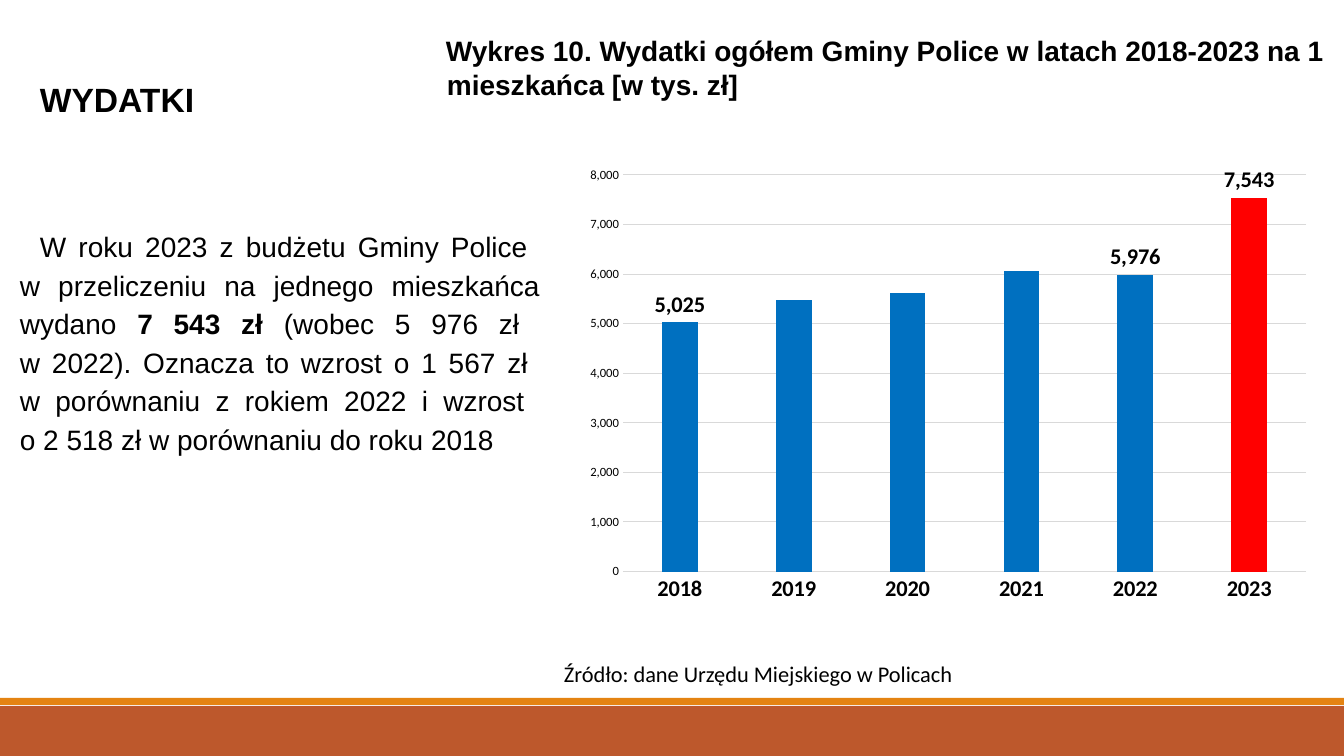
from lxml.etree import fromstring
from pptx import Presentation
from pptx.chart.data import CategoryChartData as ChartData
from pptx.dml.color import RGBColor
from pptx.enum.chart import XL_CHART_TYPE as Kind
from pptx.enum.chart import XL_LABEL_POSITION as Place
from pptx.enum.chart import XL_TICK_MARK as Tick
from pptx.enum.shapes import MSO_SHAPE as Shape
from pptx.enum.text import MSO_AUTO_SIZE as Fit
from pptx.enum.text import PP_ALIGN as Align
from pptx.util import Pt

SCALE = 914400 / 100.8
BLACK, GRID, BLUE, RED = "000000", "D9D9D9", "0070C0", "FF0000"
HEAD = {"name": "Arial", "size": Pt(24), "bold": True}
TITLE = {"name": "Arial", "size": Pt(20), "bold": True}
BODY = {"name": "Arial", "size": Pt(20), "bold": False}
NOTE = {"name": "Calibri", "size": Pt(16)}
LABEL = {"name": "Calibri", "size": Pt(16), "bold": True}
SCALE_FONT = {"name": "Calibri", "size": Pt(9), "bold": False}
INTRO = {"alignment": Align.JUSTIFY, "line_spacing": 1.15}

COSTS = {"2018": 5025, "2019": 5483, "2020": 5624,
         "2021": 6053, "2022": 5976, "2023": 7543}
SHOWN = ("2018", "2022", "2023")
LAYOUT = """<c:layout xmlns:c="http://schemas.openxmlformats.org/drawingml/2006/chart">
<c:manualLayout><c:layoutTarget val="inner"/><c:xMode val="edge"/><c:yMode val="edge"/>
<c:x val="0.063"/><c:y val="0.035"/><c:w val="0.917"/><c:h val="0.874"/>
</c:manualLayout></c:layout>"""


def px(*nums):
    return [round(n * SCALE) for n in nums]


def color(code):
    return RGBColor.from_string(code)


def apply(item, form):
    for key, value in form.items():
        setattr(item, key, value)


def style(font, form):
    apply(font, form)
    font.color.rgb = color(BLACK)


def paint(fill, code):
    fill.solid()
    fill.fore_color.rgb = color(code)


def add_bar(slide, box, code):
    bar = slide.shapes.add_shape(Shape.RECTANGLE, *px(*box))
    bar.shadow.inherit = False
    paint(bar.fill, code)
    bar.line.fill.background()


def add_text(slide, box, paras):
    """Each paragraph is (runs, format, left margin and indent in px)."""
    frame = slide.shapes.add_textbox(*px(*box)).text_frame
    apply(frame, {"word_wrap": True, "auto_size": Fit.SHAPE_TO_FIT_TEXT})
    for i, (runs, form, inset) in enumerate(paras):
        para = frame.add_paragraph() if i else frame.paragraphs[0]
        apply(para, form)
        for key, value in zip(("marL", "indent"), px(*inset)):
            para._p.get_or_add_pPr().set(key, str(value))
        for text, font in runs:
            for j, line in enumerate(text.split("\n")):
                if j:
                    para.add_line_break()
                run = para.add_run()
                run.text = line
                style(run.font, font)


def add_chart(slide, box):
    data = ChartData(number_format="#,##0")
    data.categories = list(COSTS)
    data.add_series("Series 1", list(COSTS.values()))
    chart = slide.shapes.add_chart(Kind.COLUMN_CLUSTERED, *px(*box), data).chart
    apply(chart, {"has_legend": False, "has_title": False})
    style(chart.font, {"name": "Calibri", "size": Pt(10)})

    area = chart._chartSpace.chart.plotArea
    for old in area.findall("{*}layout"):
        area.remove(old)
    area.insert(0, fromstring(LAYOUT))

    plot = chart.plots[0]
    apply(plot, {"gap_width": 219, "overlap": -27, "vary_by_categories": False})
    bars = plot.series[0]
    paint(bars.format.fill, BLUE)
    paint(bars.points[len(COSTS) - 1].format.fill, RED)
    for i, year in enumerate(COSTS):
        if year in SHOWN:
            label = bars.points[i].data_label
            style(label.font, LABEL)
            label.position = Place.OUTSIDE_END

    years, costs = chart.category_axis, chart.value_axis
    for axis, font in ((years, LABEL), (costs, SCALE_FONT)):
        apply(axis, {"major_tick_mark": Tick.NONE, "minor_tick_mark": Tick.NONE})
        style(axis.tick_labels.font, font)
    apply(costs, {"minimum_scale": 0, "maximum_scale": 8000, "major_unit": 1000,
                  "has_major_gridlines": True})
    apply(costs.tick_labels, {"number_format": "#,##0",
                              "number_format_is_linked": False})
    costs.format.line.fill.background()
    for line in (years.format.line, costs.major_gridlines.format.line):
        line.color.rgb = color(GRID)
        line.width = Pt(0.75)


def main():
    deck = Presentation()
    deck.slide_width, deck.slide_height = px(1344, 756)
    slide = deck.slides.add_slide(deck.slide_layouts[6])

    add_bar(slide, (0, 706, 1344, 50), "BD582C")
    add_bar(slide, (0, 698, 1344, 7), "E48312")

    body = [
        ("W roku 2023 z budżetu Gminy Police \n"
         "w przeliczeniu na jednego mieszkańca wydano ", BODY),
        ("7 543 zł ", TITLE),
        ("(wobec 5 976 zł \nw 2022). Oznacza to wzrost o 1 567 zł \n"
         "w porównaniu z rokiem 2022 i wzrost \n"
         "o 2 518 zł w porównaniu do roku 2018", BODY),
    ]
    add_text(slide, (9, 68, 541, 428), [
        ([("WYDATKI ", HEAD)], {**INTRO, "space_after": Pt(75)}, (1, 20)),
        (body, INTRO, (1, 20)),
    ])
    add_text(slide, (436, 29, 908, 78), [
        ([("Wykres 10. Wydatki ogółem Gminy Police w latach 2018-2023 na 1 "
           "mieszkańca [w tys. zł]", TITLE)], {}, (1, -1)),
    ])
    add_text(slide, (554, 655, 672, 37), [
        ([("Źródło: dane Urzędu Miejskiego w Policach", NOTE)], {}, (0, 0)),
    ])
    add_chart(slide, (576, 159, 745, 454))
    deck.save("out.pptx")


if __name__ == "__main__":
    main()
